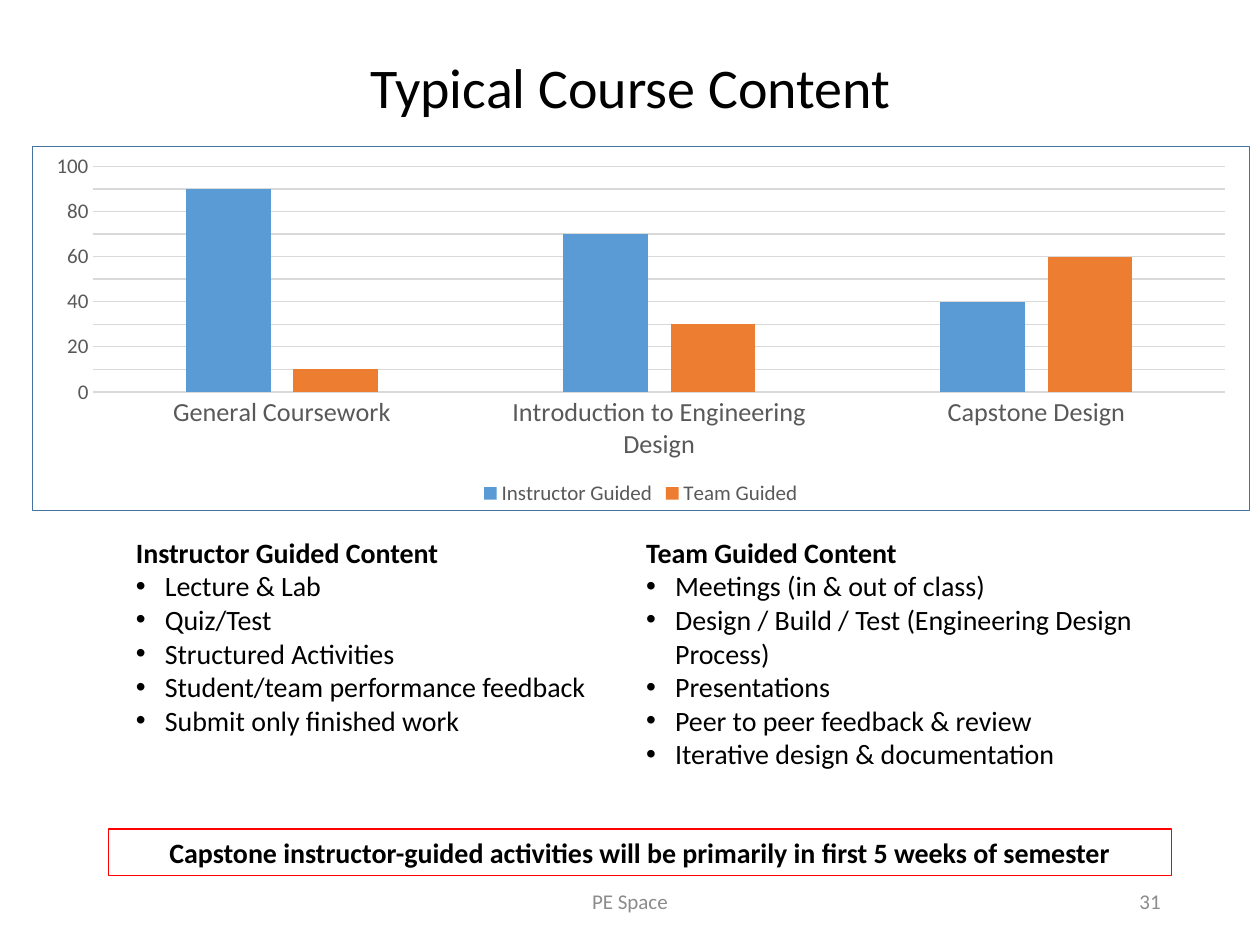
from lxml.etree import fromstring
from pptx import Presentation
from pptx.chart.data import CategoryChartData as Data
from pptx.dml.color import RGBColor as RGB
from pptx.enum.chart import XL_CHART_TYPE as Kind, XL_LEGEND_POSITION as Spot, XL_TICK_MARK as Tick
from pptx.enum.shapes import MSO_SHAPE as Form
from pptx.enum.text import MSO_ANCHOR as Anchor, PP_ALIGN as Align
from pptx.oxml import parse_xml
from pptx.oxml.ns import qn
from pptx.util import Inches, Pt

HUES = {"ink": "000000", "axis": "595959", "grid": "D9D9D9", "foot": "8C8C8C",
        "alert": "FF0000", "edge": "43739E", "blue": "5B9BD5", "orange": "ED7D31"}
FACE = "Calibri"
CATS = ["General Coursework", "Introduction to Engineering Design", "Capstone Design"]
SERIES = [("Instructor Guided", [90, 70, 40], "blue"),
          ("Team Guided", [10, 30, 60], "orange")]
LISTS = [
    ((0.98, 4.2, 3.91, 1.99), "Instructor Guided Content",
     ["Lecture & Lab", "Quiz/Test", "Structured Activities",
      "Student/team performance feedback", "Submit only finished work"]),
    ((5.03, 4.2, 4.19, 1.99), "Team Guided Content",
     ["Meetings (in & out of class)",
      "Design / Build / Test (Engineering Design Process)", "Presentations",
      "Peer to peer feedback & review", "Iterative design & documentation"]),
]
NOTE = "Capstone instructor-guided activities will be primarily in first 5 weeks of semester"
LINES = [
    ((2.38, 0.37, 5.25, 0.94), "Typical Course Content", 32, "ink", Align.CENTER, Anchor.TOP),
    ((3.31, 6.95, 3.38, 0.4), "PE Space", 12, "foot", Align.CENTER, Anchor.MIDDLE),
    ((7.06, 6.95, 2.25, 0.4), "31", 12, "foot", Align.RIGHT, Anchor.MIDDLE),
]
FRAME = (0.25, 1.16, 9.67, 2.9)
NOTE_BOX = (0.86, 6.58, 8.44, 0.37)
INDENT = 0.23
AXIS = {"major_tick_mark": Tick.NONE, "minor_tick_mark": Tick.NONE}
SCALE = {"minimum_scale": 0, "maximum_scale": 100, "major_unit": 10}
PLOT = {"gap_width": 219, "overlap": -27, "vary_by_categories": False}
LEGEND = {"position": Spot.BOTTOM, "include_in_layout": False}


def apply(item, values):
    for key, value in values.items():
        setattr(item, key, value)


def rgb(hue):
    return RGB.from_string(HUES[hue])


def style(font, size, hue, bold=False):
    apply(font, {"name": FACE, "size": Pt(size), "bold": bold})
    font.color.rgb = rgb(hue)


def stroke(line, hue):
    line.color.rgb = rgb(hue)
    line.width = Pt(0.75)


def write(para, text, size, hue="ink", bold=False, align=Align.LEFT):
    para.alignment = align
    run = para.add_run()
    run.text = text
    style(run.font, size, hue, bold)


def bullet(para):
    props = para._p.get_or_add_pPr()
    props.set("marL", str(Inches(INDENT)))
    props.set("indent", str(-Inches(INDENT)))
    space = props.nsmap["a"]
    props.append(fromstring(f'<a:buFont xmlns:a="{space}" typeface="Arial"/>'))
    props.append(fromstring(f'<a:buChar xmlns:a="{space}" char="•"/>'))


def add_text(slide, box, anchor=Anchor.TOP):
    frame = slide.shapes.add_textbox(*map(Inches, box)).text_frame
    apply(frame, {"word_wrap": True, "vertical_anchor": anchor})
    return frame


def add_graph(slide):
    data = Data()
    data.categories = CATS
    for name, vals, _ in SERIES:
        data.add_series(name, vals)
    chart = slide.shapes.add_chart(Kind.COLUMN_CLUSTERED, *map(Inches, FRAME), data).chart
    apply(chart, {"has_title": False, "has_legend": True})
    style(chart.font, 10, "ink")
    apply(chart.legend, LEGEND)
    style(chart.legend.font, 12, "axis")
    apply(chart.plots[0], PLOT)
    for bars, (_, _, hue) in zip(chart.plots[0].series, SERIES):
        bars.format.fill.solid()
        bars.format.fill.fore_color.rgb = rgb(hue)
    cat, val = chart.category_axis, chart.value_axis
    for axis, size in ((cat, 15), (val, 12)):
        apply(axis, AXIS)
        style(axis.tick_labels.font, size, "axis")
    apply(val, SCALE)
    stroke(cat.format.line, "grid")
    stroke(val.major_gridlines.format.line, "grid")
    val.format.line.fill.background()
    root = chart._chartSpace
    root.find(qn("c:chart")).addnext(parse_xml(
        f'<c:spPr xmlns:c="{root.nsmap["c"]}" xmlns:a="{root.nsmap["a"]}"><a:noFill/>'
        f'<a:ln w="{Pt(0.75)}"><a:solidFill><a:srgbClr val="{HUES["edge"]}"/>'
        '</a:solidFill></a:ln></c:spPr>'))


def main():
    deck = Presentation()
    apply(deck, {"slide_width": Inches(10), "slide_height": Inches(7.5)})
    slide = deck.slides.add_slide(deck.slide_layouts[6])
    for box, head, items in LISTS:
        frame = add_text(slide, box)
        write(frame.paragraphs[0], head, 16, bold=True)
        for item in items:
            para = frame.add_paragraph()
            write(para, item, 16)
            bullet(para)
    note = slide.shapes.add_shape(Form.RECTANGLE, *map(Inches, NOTE_BOX))
    note.shadow.inherit = False
    note.fill.background()
    stroke(note.line, "alert")
    apply(note.text_frame, {"word_wrap": True, "vertical_anchor": Anchor.TOP})
    write(note.text_frame.paragraphs[0], NOTE, 16, bold=True, align=Align.CENTER)
    add_graph(slide)
    for box, text, size, hue, align, anchor in LINES:
        write(add_text(slide, box, anchor).paragraphs[0], text, size, hue, align=align)
    deck.save("out.pptx")


if __name__ == "__main__":
    main()
